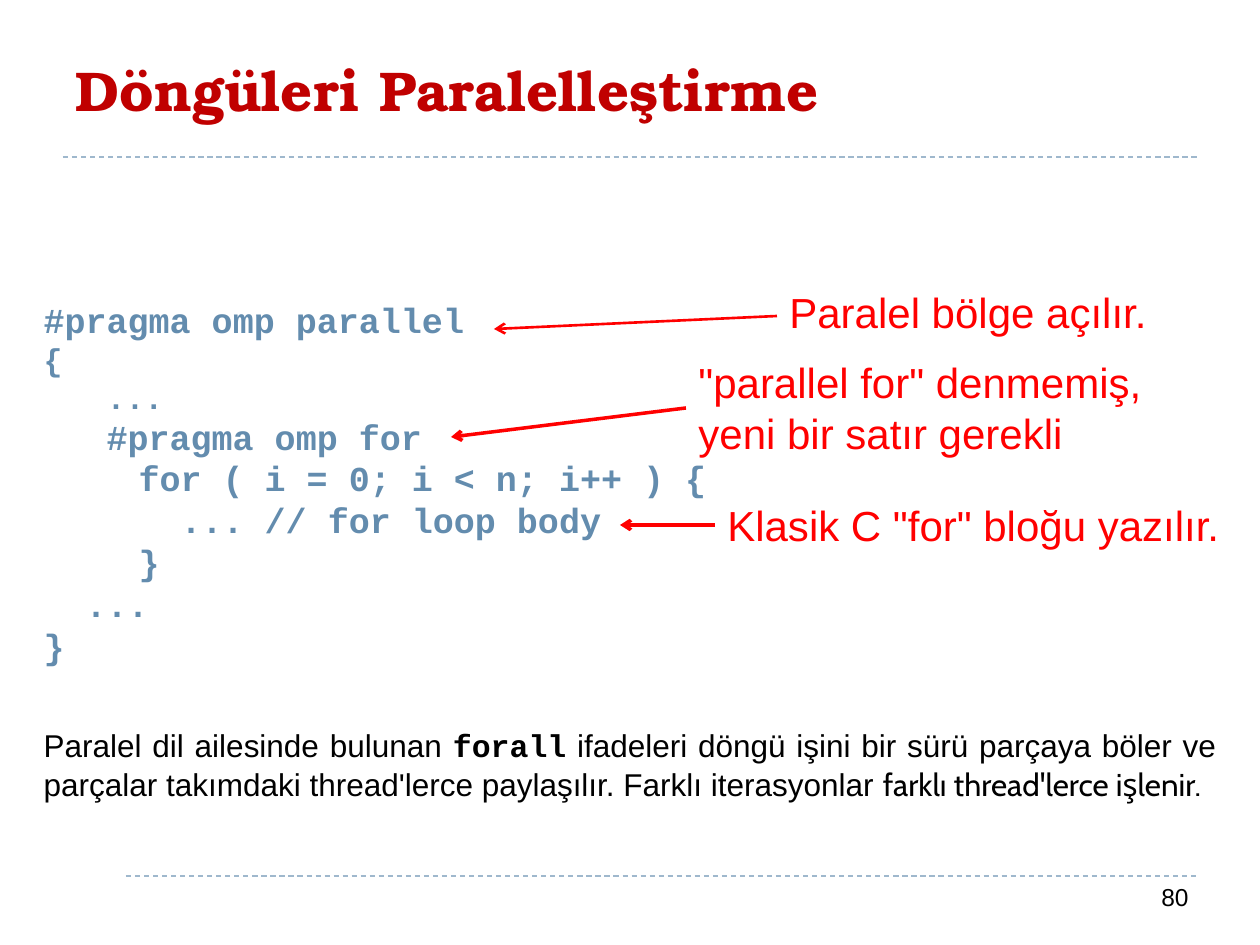
from dataclasses import dataclass

from lxml.etree import SubElement
from pptx import Presentation
from pptx.dml.color import RGBColor
from pptx.enum.dml import MSO_LINE
from pptx.enum.shapes import MSO_CONNECTOR
from pptx.enum.text import MSO_ANCHOR, MSO_AUTO_SIZE, PP_ALIGN
from pptx.oxml.ns import qn
from pptx.util import Pt

PX = 914400 // 126


@dataclass(frozen=True)
class Theme:
    title: str = "C00000"
    code: str = "638CAE"
    text: str = "000000"
    note: str = "FF0000"
    rule: str = "9FB8CD"
    title_font: str = "TeX Gyre Bonum"
    code_font: str = "Courier New"
    text_font: str = "Arial"
    accent_font: str = "Cabin"
    title_size: int = 32
    note_size: int = 24
    code_size: int = 20
    body_size: int = 18
    number_size: int = 14
    leading: float = 1.215
    code_ratio: float = 0.985


THEME = Theme()
TITLE = "Döngüleri Paralelleştirme"
PAGE_NUMBER = "80"

CODE = [  # indent, text, size
    (0, "#pragma omp parallel", THEME.code_size),
    (0, "{", THEME.body_size),
    (63, "...", THEME.body_size),
    (63, "#pragma omp for", THEME.code_size),
    (95, "for ( i = 0; i < n; i++ ) {", THEME.code_size),
    (95, "  ... // for loop body", THEME.code_size),
    (95, "}", THEME.code_size),
    (0, "  ...", THEME.code_size),
    (0, "}", THEME.code_size),
]
SUMMARY = [  # text, font, bold
    ("Paralel dil ailesinde bulunan ", THEME.text_font, False),
    ("forall", THEME.code_font, True),
    (" ifadeleri döngü işini bir sürü parçaya böler ve parçalar takımdaki "
     "thread'lerce paylaşılır. Farklı iterasyonlar ", THEME.text_font, False),
    ("farklı thread'lerce işlenir.", THEME.accent_font, False),
]
NOTES = [  # lines, box, line spacing, arrow start, arrow end, arrow width
    (["Paralel bölge açılır."], (777, 285, 420, 58), 0.89,
     (777, 316), (494, 329), 1.5),
    (['"parallel for" denmemiş,', "yeni bir satır gerekli"], (686, 350, 474, 115), 1,
     (686, 408), (451, 437), 2),
    (['Klasik C "for" bloğu yazılır.'], (715, 493, 545, 64), 1,
     (715, 525), (620, 525), 2),
]
RULES = [((63, 157), (1197, 157)), ((126, 876), (1197, 876))]


def place(shape, box):
    shape.left, shape.top, shape.width, shape.height = [value * PX for value in box]


def prepare_frame(shape, anchor=MSO_ANCHOR.TOP):
    frame = shape.text_frame
    frame.word_wrap = True
    frame.auto_size = MSO_AUTO_SIZE.NONE
    frame.vertical_anchor = anchor
    return frame


def add_run(paragraph, text, font, size, color, bold=False):
    run = paragraph.add_run()
    run.text = text
    run.font.name = font
    run.font.size = Pt(size)
    run.font.bold = bold
    run.font.color.rgb = RGBColor.from_string(color)


def format_paragraph(paragraph, size, align=PP_ALIGN.LEFT, before=0, ratio=1):
    paragraph.alignment = align
    paragraph.line_spacing = Pt(round(size * THEME.leading * ratio, 1))
    paragraph.space_before = Pt(before)
    paragraph.space_after = Pt(0)


def indent_without_bullet(paragraph, indent=0):
    properties = paragraph._p.get_or_add_pPr()
    properties.set("marL", str(indent * PX))
    properties.set("indent", "0")
    SubElement(properties, qn("a:buNone"))


def add_line(slide, start, end, color, width):
    line = slide.shapes.add_connector(
        MSO_CONNECTOR.STRAIGHT, *[value * PX for value in (*start, *end)])
    line.line.color.rgb = RGBColor.from_string(color)
    line.line.width = Pt(width)
    SubElement(line._element.spPr, qn("a:effectLst"))
    return line


def add_title(slide):
    title = slide.shapes.title
    place(title, (63, 21, 1134, 136))
    paragraph = prepare_frame(title, MSO_ANCHOR.MIDDLE).paragraphs[0]
    paragraph.alignment = PP_ALIGN.LEFT
    add_run(paragraph, TITLE, THEME.title_font, THEME.title_size, THEME.title, True)


def add_body(slide):
    body = slide.placeholders[1]
    place(body, (31, 292, 1198, 561))
    frame = prepare_frame(body)
    for index, (indent, text, size) in enumerate(CODE):
        paragraph = frame.add_paragraph() if index else frame.paragraphs[0]
        format_paragraph(paragraph, size, ratio=THEME.code_ratio)
        indent_without_bullet(paragraph, indent)
        add_run(paragraph, text, THEME.code_font, size, THEME.code, True)
    paragraph = frame.add_paragraph()
    format_paragraph(paragraph, THEME.body_size, PP_ALIGN.JUSTIFY, before=34)
    indent_without_bullet(paragraph)
    for text, font, bold in SUMMARY:
        add_run(paragraph, text, font, THEME.body_size, THEME.text, bold)


def add_text_box(slide, lines, box, size, color, align=PP_ALIGN.LEFT, ratio=1):
    shape = slide.shapes.add_textbox(*[value * PX for value in box])
    paragraph = prepare_frame(shape).paragraphs[0]
    format_paragraph(paragraph, size, align, ratio=ratio)
    for index, text in enumerate(lines):
        if index:
            paragraph.add_line_break()
        add_run(paragraph, text, THEME.text_font, size, color)


def add_notes(slide):
    """Red remarks, each with an arrow to its code line."""
    for lines, box, ratio, start, end, width in NOTES:
        add_text_box(slide, lines, box, THEME.note_size, THEME.note, ratio=ratio)
        arrow = add_line(slide, start, end, THEME.note, width)
        SubElement(arrow.line._get_or_add_ln(), qn("a:tailEnd"), type="arrow")


def main():
    presentation = Presentation()
    presentation.slide_width = 1260 * PX
    presentation.slide_height = 945 * PX
    slide = presentation.slides.add_slide(presentation.slide_layouts[1])
    for start, end in RULES:
        add_line(slide, start, end, THEME.rule, 0.75).line.dash_style = MSO_LINE.DASH
    add_title(slide)
    add_body(slide)
    add_notes(slide)
    add_text_box(slide, [PAGE_NUMBER], (907, 875, 294, 50), THEME.number_size,
                 THEME.text, PP_ALIGN.RIGHT)
    presentation.save("out.pptx")


if __name__ == "__main__":
    main()
